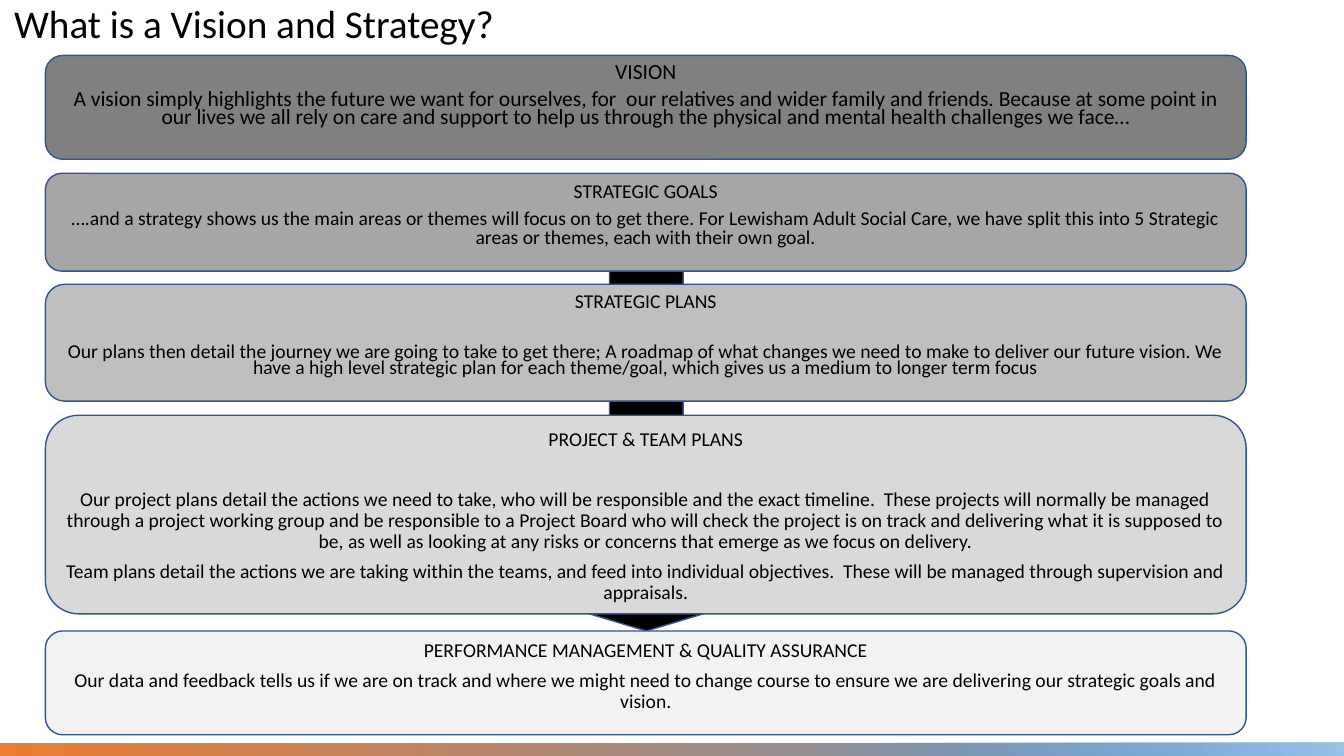
from lxml.etree import SubElement
from pptx import Presentation
from pptx.dml.color import RGBColor
from pptx.enum.shapes import MSO_SHAPE
from pptx.enum.text import MSO_ANCHOR, MSO_AUTO_SIZE, PP_ALIGN
from pptx.oxml.ns import qn
from pptx.util import Inches, Pt

FONT = "Calibri"
BLACK = "000000"
OUTLINE = "325491"
PANEL_LEFT, PANEL_WIDTH = 0.45, 11.91

# top, height, fill, text size, line spacing, gap above the body, heading, body
PANELS = [
    (0.55, 1.03, "808080", 15.4, 0.7, 0, "VISION", [
        "A vision simply highlights the future we want for ourselves, for  our relatives "
        "and wider family and friends. Because at some point in our lives we all rely on "
        "care and support to help us through the physical and mental health challenges "
        "we face…"]),
    (1.72, 0.97, "A6A6A6", 14, 0.8, 0, "STRATEGIC GOALS", [
        "….and a strategy shows us the main areas or themes will focus on to get there. "
        "For Lewisham Adult Social Care, we have split this into 5 Strategic areas or "
        "themes, each with their own goal."]),
    (2.82, 1.16, "BFBFBF", 14, 0.7, 18, "STRATEGIC PLANS", [
        "Our plans then detail the journey we are going to take to get there; A roadmap "
        "of what changes we need to make to deliver our future vision. We have a high "
        "level strategic plan for each theme/goal, which gives us a medium to longer "
        "term focus"]),
    (4.12, 1.97, "D9D9D9", 14, 0.9, 21.4, "PROJECT & TEAM PLANS", [
        "Our project plans detail the actions we need to take, who will be responsible "
        "and the exact timeline.  These projects will normally be managed through a "
        "project working group and be responsible to a Project Board who will check the "
        "project is on track and delivering what it is supposed to be, as well as looking "
        "at any risks or concerns that emerge as we focus on delivery.",
        "Team plans detail the actions we are taking within the teams, and feed into "
        "individual objectives.  These will be managed through supervision and "
        "appraisals."]),
    (6.26, 1.03, "F2F2F2", 14, 0.9, 0, "PERFORMANCE MANAGEMENT & QUALITY ASSURANCE", [
        "Our data and feedback tells us if we are on track and where we might need to "
        "change course to ensure we are delivering our strategic goals and vision."]),
]


def color(hex_text):
    return RGBColor.from_string(hex_text)


def write(para, text, size=14, spacing=0.9, before=0, after=0, align=PP_ALIGN.CENTER):
    para.alignment = align
    para.line_spacing = spacing
    para.space_before = Pt(before)
    para.space_after = Pt(after)
    span = para.add_run()
    span.text = text
    span.font.name = FONT
    span.font.size = Pt(size)
    span.font.color.rgb = color(BLACK)


def add_shape(page, kind, left, top, width, height, fill=None, line=None):
    shape = page.shapes.add_shape(
        kind, Inches(left), Inches(top), Inches(width), Inches(height))
    shape.shadow.inherit = False
    if fill:
        shape.fill.solid()
        shape.fill.fore_color.rgb = color(fill)
    if line:
        shape.line.color.rgb = color(line)
        shape.line.width = Pt(1)
    else:
        shape.line.fill.background()
    return shape


def add_title(page, text):
    title = page.shapes.title
    title.left, title.top = Inches(0.04), Inches(-0.82)
    title.width, title.height = Inches(9.27), Inches(1.77)
    frame = title.text_frame
    frame.word_wrap = True
    frame.auto_size = MSO_AUTO_SIZE.NONE
    frame.vertical_anchor = MSO_ANCHOR.BOTTOM
    frame.margin_bottom = Inches(0.48)
    write(frame.paragraphs[0], text, size=28, align=PP_ALIGN.LEFT)


def add_flow_arrow(page):
    """Downward arrow that shows in the gaps between the panels."""
    arrow = add_shape(page, MSO_SHAPE.RIGHT_ARROW, 4.17, 3.29, 4.48, 1.46, BLACK, OUTLINE)
    arrow.rotation = 90
    arrow.adjustments[0] = 0.5
    arrow.adjustments[1] = 0.151


def add_panel(page, top, height, fill, size, spacing, gap, heading, body):
    panel = add_shape(page, MSO_SHAPE.ROUNDED_RECTANGLE,
                      PANEL_LEFT, top, PANEL_WIDTH, height, fill, OUTLINE)
    frame = panel.text_frame
    frame.word_wrap = True
    frame.vertical_anchor = MSO_ANCHOR.TOP
    write(frame.paragraphs[0], heading, size=size, spacing=spacing, after=6)
    for index, text in enumerate(body):
        write(frame.add_paragraph(), text, size=size, spacing=spacing,
              before=0 if index else gap, after=6)


def add_gradient_bar(page, left, width, start, end, start_at=0, clear_start=False):
    """Footer strip that blends from left to right."""
    bar = add_shape(page, MSO_SHAPE.RECTANGLE, left, 7.37, width, 0.13)
    bar.fill.gradient()
    bar.fill.gradient_angle = 0
    stops = bar.fill.gradient_stops
    for stop, position, hex_text in zip(stops, (start_at, 1), (start, end)):
        stop.position = position
        stop.color.rgb = color(hex_text)
    if clear_start:
        first_color = next(bar.element.spPr.iter(qn("a:srgbClr")))
        SubElement(first_color, qn("a:alpha"), val="0")


def main():
    deck = Presentation()
    deck.slide_width, deck.slide_height = Inches(13.33), Inches(7.5)
    page = deck.slides.add_slide(deck.slide_layouts[5])
    add_title(page, "What is a Vision and Strategy?")
    add_flow_arrow(page)
    add_gradient_bar(page, 0, 13.33, "ED7D31", "5B9BD5")
    add_gradient_bar(page, 6.86, 6.47, "5B9BD5", "9DC3E6", start_at=0.19, clear_start=True)
    for panel in PANELS:
        add_panel(page, *panel)
    deck.save("out.pptx")


if __name__ == "__main__":
    main()
